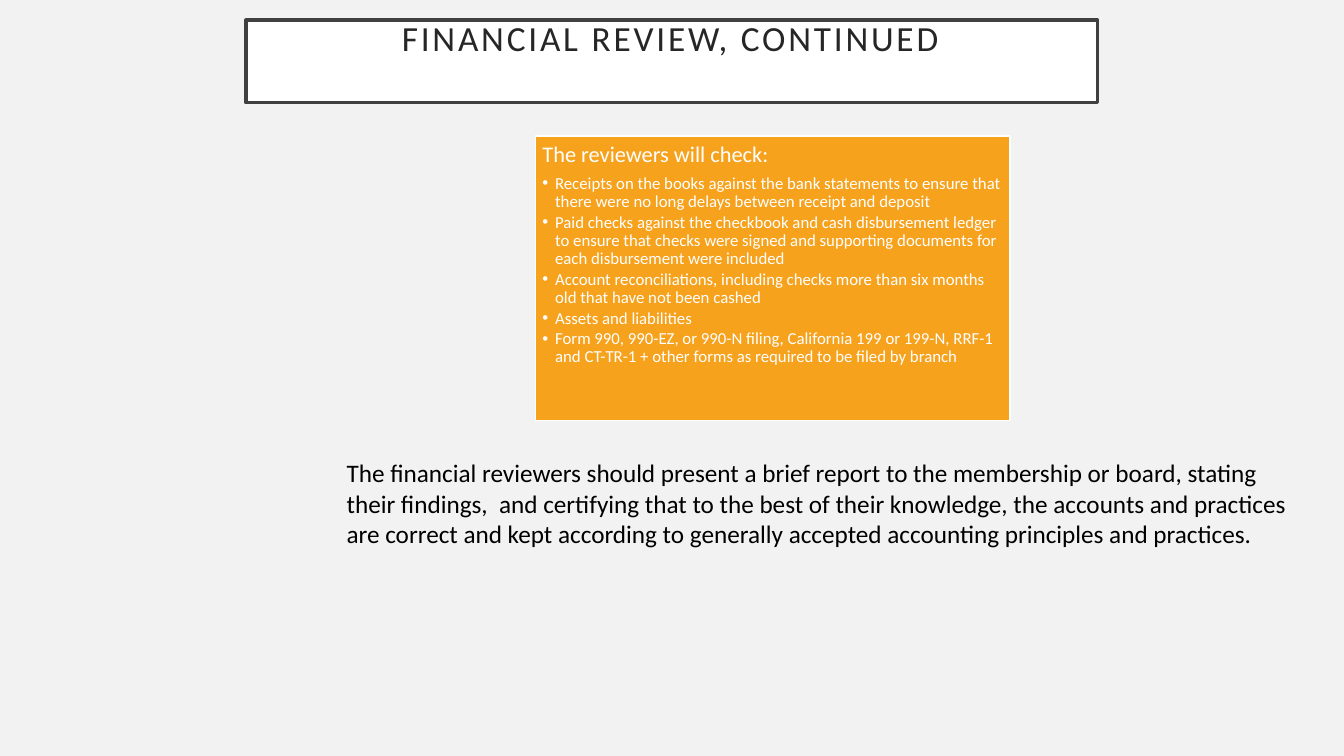
"""Build the financial review slide with its title, checklist and closing note."""
import pptx
import pptx.util
import pptx.dml.color
import pptx.enum.text
import pptx.oxml

Pt = pptx.util.Pt
RGB = pptx.dml.color.RGBColor
ENUM = pptx.enum.text
PAPER = RGB(0xF2, 0xF2, 0xF2)
WHITE = RGB(0xFF, 0xFF, 0xFF)
BLACK = RGB(0, 0, 0)
FRAME = RGB(0x40, 0x40, 0x40)
INK = RGB(0x26, 0x26, 0x26)
ORANGE = RGB(0xF6, 0xA2, 0x1D)
NS = 'xmlns:a="http://schemas.openxmlformats.org/drawingml/2006/main"'
CHECKS = [
    "Receipts on the books against the bank statements to ensure that there were no long delays between receipt and deposit",
    "Paid checks against the checkbook and cash disbursement ledger to ensure that checks were signed and supporting documents for each disbursement were included",
    "Account reconciliations, including checks more than six months old that have not been cashed",
    "Assets and liabilities",
    "Form 990, 990-EZ, or 990-N filing, California 199 or 199-N, RRF-1 and CT-TR-1 + other forms as required to be filed by branch",
]
NOTE = "The financial reviewers should present a brief report to the membership or board, stating their findings,  and certifying that to the best of their knowledge, the accounts and practices are correct and kept according to generally accepted accounting principles and practices."


def style(para, size, color):
    para.font.name = "Calibri"
    para.font.size = Pt(size)
    para.font.color.rgb = color


def panel(shape, box, fill, edge, width, inset, anchor):
    shape.left, shape.top, shape.width, shape.height = map(Pt, box)
    shape.fill.solid()
    shape.fill.fore_color.rgb = fill
    shape.line.color.rgb = edge
    shape.line.width = Pt(width)
    frame = shape.text_frame
    frame.auto_size = ENUM.MSO_AUTO_SIZE.NONE
    frame.word_wrap = True
    frame.vertical_anchor = anchor
    frame.margin_left = frame.margin_right = Pt(inset)
    frame.margin_top = frame.margin_bottom = Pt(inset)
    return frame


deck = pptx.Presentation()
deck.slide_width, deck.slide_height = Pt(960), Pt(540)
slide = deck.slides.add_slide(deck.slide_layouts[1])
slide.background.fill.solid()
slide.background.fill.fore_color.rgb = PAPER

title = panel(slide.shapes.title, (175.7, 14.4, 608.4, 59), WHITE, FRAME, 2.5, 14.4,
              ENUM.MSO_ANCHOR.MIDDLE)
head = title.paragraphs[0]
head.text = "FINANCIAL REVIEW, CONTINUED\v"
head.alignment = ENUM.PP_ALIGN.CENTER
head.line_spacing = 0.9
style(head, 25.2, INK)
head.runs[0].font._element.set("spc", "200")

body = panel(slide.placeholders[1], (382.5, 97.2, 339, 203), ORANGE, WHITE, 1, 5,
             ENUM.MSO_ANCHOR.TOP)
body.text = "\n".join(["The reviewers will check:"] + CHECKS)
for rank, para in enumerate(body.paragraphs):
    size, after, indent, mark = (12, 1.8, 9, '<a:buChar %s char="•"/>') if rank else (16, 5.6, 0, "<a:buNone %s/>")
    para.level = min(rank, 1)
    para.line_spacing = 0.9
    para.space_before = Pt(0)
    para.space_after = Pt(after)
    props = para._p.get_or_add_pPr()
    props.set("marL", str(Pt(indent)))
    props.set("indent", str(-Pt(indent)))
    props.append(pptx.oxml.parse_xml(mark % NS))
    style(para, size, WHITE)

note = slide.shapes.add_textbox(Pt(240.5), Pt(323.3), Pt(697.7), Pt(94.3)).text_frame
note.word_wrap = True
note.text = NOTE
style(note.paragraphs[0], 18, BLACK)

deck.save("out.pptx")
